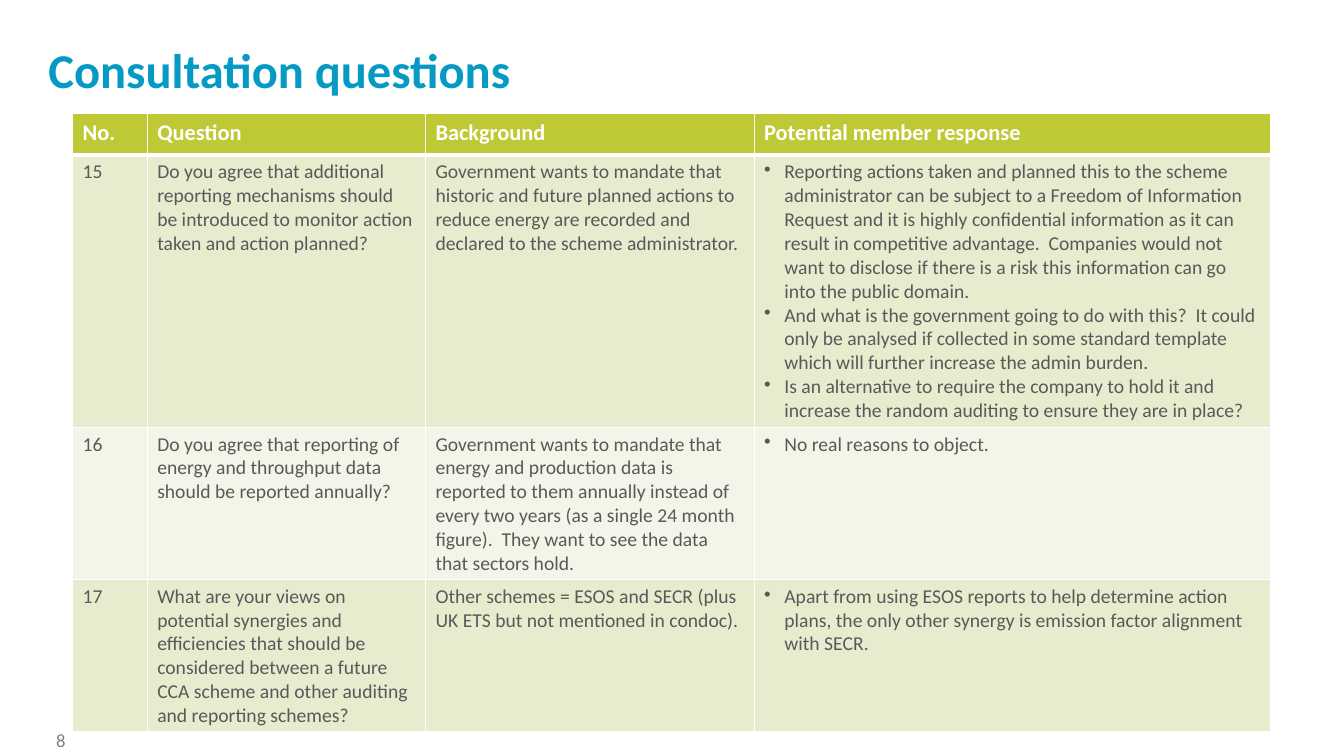
from lxml.etree import SubElement
from pptx import Presentation
from pptx.dml.color import RGBColor
from pptx.enum.text import MSO_ANCHOR, MSO_AUTO_SIZE, PP_ALIGN
from pptx.oxml import parse_xml
from pptx.oxml.ns import nsdecls, qn
from pptx.util import Inches, Pt

COLORS = {"title": "059AC4", "head": "BFC936", "odd": "E8EBCE", "even": "F4F5E8",
          "text": "595959", "page": "808080", "white": "FFFFFF"}
WIDTHS = [0.74, 2.76, 3.26, 5.12]
HEIGHTS = [0.41, 2.7, 1.51, 1.51]
HEADS = ["No.", "Question", "Background", "Potential member response"]
ROWS = [
    ["15",
     "Do you agree that additional reporting mechanisms should be introduced to monitor "
     "action taken and action planned?",
     "Government wants to mandate that historic and future planned actions to reduce energy "
     "are recorded and declared to the scheme administrator.",
     "Reporting actions taken and planned this to the scheme administrator can be subject to "
     "a Freedom of Information Request and it is highly confidential information as it can "
     "result in competitive advantage.  Companies would not want to disclose if there is a "
     "risk this information can go into the public domain.\n"
     "And what is the government going to do with this?  It could only be analysed if "
     "collected in some standard template which will further increase the admin burden.\n"
     "Is an alternative to require the company to hold it and increase the random auditing "
     "to ensure they are in place?"],
    ["16",
     "Do you agree that reporting of energy and throughput data should be reported annually?",
     "Government wants to mandate that energy and production data is reported to them "
     "annually instead of every two years (as a single 24 month figure).  They want to see "
     "the data that sectors hold.",
     "No real reasons to object."],
    ["17",
     "What are your views on potential synergies and efficiencies that should be considered "
     "between a future CCA scheme and other auditing and reporting schemes?",
     "Other schemes = ESOS and SECR (plus UK ETS but not mentioned in condoc).",
     "Apart from using ESOS reports to help determine action plans, the only other synergy "
     "is emission factor alignment with SECR."],
]


def style(frame, size, color, bold=False):
    """Format every run in a text frame."""
    for para in frame.paragraphs:
        for run in para.runs:
            font = run.font
            font.name, font.size, font.bold = "Calibri", Pt(size), bold
            font.color.rgb = RGBColor.from_string(COLORS[color])


def bullet(para):
    """Give a paragraph a hanging bullet."""
    props = para._p.get_or_add_pPr()
    props.set("marL", str(Inches(0.2)))
    props.set("indent", str(-Inches(0.2)))
    SubElement(props, qn("a:buChar")).set("char", "•")


def border(cell, base):
    """Draw white lines round a cell, with the given base width."""
    props = cell._tc.get_or_add_tcPr()
    for spot, (side, width) in enumerate([("L", 1), ("R", 1), ("T", 1), ("B", base)]):
        props.insert(spot, parse_xml(
            f'<a:ln{side} {nsdecls("a")} w="{Pt(width)}"><a:solidFill>'
            f'<a:srgbClr val="{COLORS["white"]}"/></a:solidFill></a:ln{side}>'))


def add_title(slide, text, box):
    """Place the slide title in its box."""
    title = slide.shapes.title
    title.left, title.top, title.width, title.height = map(Inches, box)
    frame = title.text_frame
    frame.text = text
    frame.auto_size = MSO_AUTO_SIZE.NONE
    frame.vertical_anchor = MSO_ANCHOR.MIDDLE
    frame.paragraphs[0].alignment = PP_ALIGN.LEFT
    style(frame, 34.7, "title", True)


def add_page(slide, text, box):
    """Place the page number in its box."""
    frame = slide.shapes.add_textbox(*map(Inches, box)).text_frame
    frame.word_wrap = True
    frame.text = text
    style(frame, 13.3, "page")


def add_grid(slide, left, top):
    """Place the question table with its corner at left, top."""
    box = map(Inches, (left, top, sum(WIDTHS), sum(HEIGHTS)))
    grid = slide.shapes.add_table(len(HEIGHTS), len(WIDTHS), *box).table
    for col, width in zip(grid.columns, WIDTHS):
        col.width = Inches(width)
    for row, height in zip(grid.rows, HEIGHTS):
        row.height = Inches(height)
    for r, texts in enumerate([HEADS] + ROWS):
        head = r == 0
        fill = "head" if head else "odd" if r % 2 else "even"
        for c, text in enumerate(texts):
            cell = grid.cell(r, c)
            cell.text_frame.text = text
            cell.fill.solid()
            cell.fill.fore_color.rgb = RGBColor.from_string(COLORS[fill])
            border(cell, 3 if head else 1)
            if not head and c == len(WIDTHS) - 1:
                for para in cell.text_frame.paragraphs:
                    bullet(para)
            style(cell.text_frame, 16 if head else 14, "white" if head else "text", head)


def main():
    """Build the slide and save it."""
    deck = Presentation()
    deck.slide_width, deck.slide_height = Inches(13.33), Inches(7.5)
    slide = deck.slides.add_slide(deck.slide_layouts[5])
    add_title(slide, "Consultation questions", (0.38, 0.17, 12, 1.03))
    add_page(slide, "8", (0.46, 7.18, 0.56, 0.4))
    add_grid(slide, 0.72, 1.13)
    deck.save("out.pptx")


if __name__ == "__main__":
    main()
